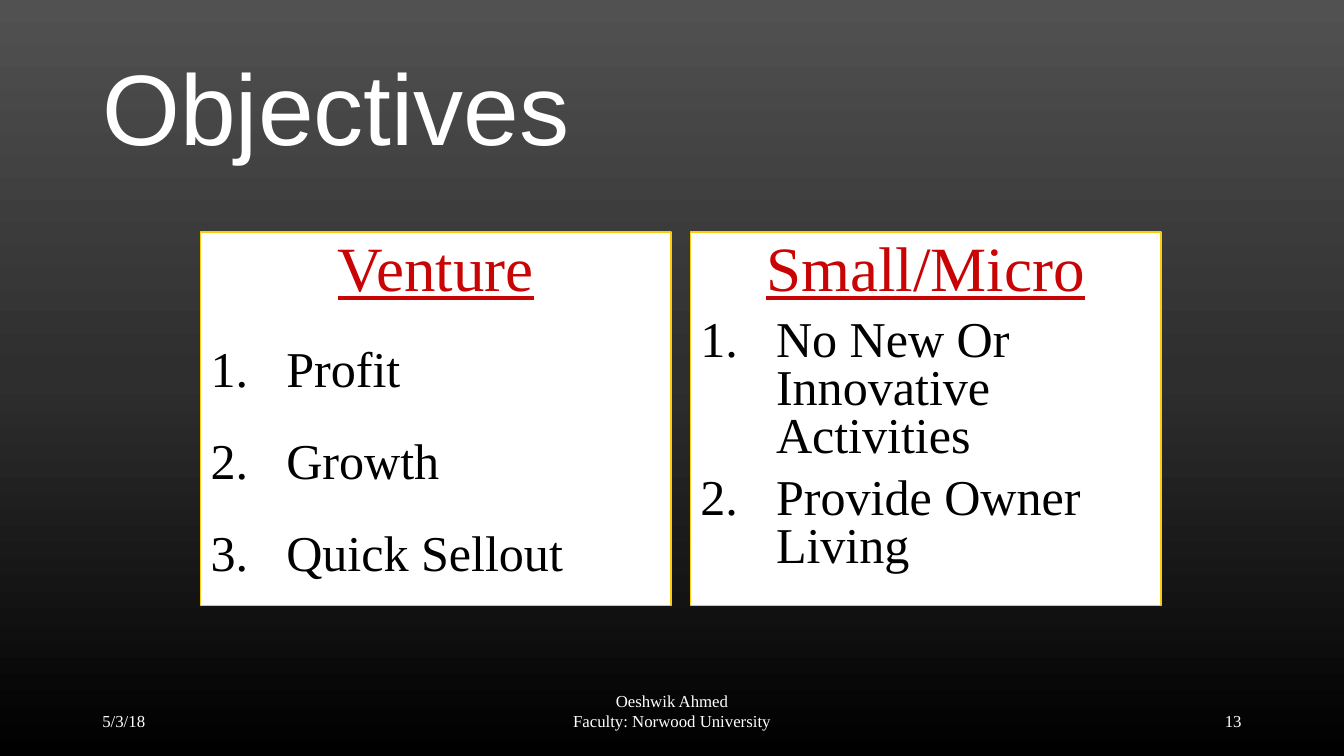
from copy import deepcopy

from lxml.etree import SubElement
from pptx import Presentation
from pptx.dml.color import RGBColor
from pptx.enum.shapes import MSO_SHAPE
from pptx.enum.text import MSO_ANCHOR, PP_ALIGN
from pptx.oxml.ns import qn
from pptx.util import Inches, Pt

COLUMNS, ROWS = 160, 90
WHITE, BLACK, RED, GOLD = "FFFFFF", "000000", "C80404", "FFCA08"
SERIF, SANS = "Times New Roman", "Arial"


def color(hex_string):
    return RGBColor.from_string(hex_string)


class SlideBuilder:
    """Holds the style and the slide; places are columns and rows of a 160 by 90 grid."""

    def __init__(self, presentation):
        self.column = presentation.slide_width / COLUMNS
        self.row = presentation.slide_height / ROWS
        self.slide = presentation.slides.add_slide(presentation.slide_layouts[6])

    def place(self, left, top, width, height):
        return [round(value) for value in (left * self.column, top * self.row,
                                           width * self.column, height * self.row)]

    def background(self, top, middle, bottom):
        fill = self.slide.background.fill
        fill.gradient()
        fill.gradient_angle = 270
        stop_list = self.slide.element.find(".//" + qn("a:gsLst"))
        stop_list.insert(1, deepcopy(stop_list[0]))
        for stop, position, shade in zip(fill.gradient_stops, (0, 0.5, 1), (top, middle, bottom)):
            stop.position = position
            stop.color.rgb = color(shade)

    def format(self, paragraph, size, font_color, name=SERIF, align=PP_ALIGN.LEFT,
               underline=False, spacing=1.0, before=0):
        paragraph.alignment = align
        paragraph.line_spacing = spacing
        paragraph.space_before = Pt(before)
        for run in paragraph.runs:
            run.font.size = Pt(size)
            run.font.name = name
            run.font.underline = underline
            run.font.color.rgb = color(font_color)

    def number(self, paragraph):
        """Gives the paragraph an automatic number with a hanging indent."""
        properties = paragraph._p.get_or_add_pPr()
        properties.set("marL", str(Inches(0.75)))
        properties.set("indent", str(-Inches(0.75)))
        SubElement(properties, qn("a:buFont"), typeface=SERIF)
        SubElement(properties, qn("a:buAutoNum"), type="arabicPeriod")

    def text(self, place, wording, size, **style):
        frame = self.slide.shapes.add_textbox(*self.place(*place)).text_frame
        frame.word_wrap = True
        frame.vertical_anchor = MSO_ANCHOR.MIDDLE
        frame.text = wording
        for paragraph in frame.paragraphs:
            self.format(paragraph, size, WHITE, **style)

    def panel(self, place, heading, items, spacing):
        shape = self.slide.shapes.add_shape(MSO_SHAPE.RECTANGLE, *self.place(*place))
        shape.shadow.inherit = False
        shape.fill.solid()
        shape.fill.fore_color.rgb = color(WHITE)
        shape.line.color.rgb = color(GOLD)
        shape.line.width = Pt(1)
        frame = shape.text_frame
        frame.word_wrap = True
        frame.vertical_anchor = MSO_ANCHOR.TOP
        frame.text = "\n".join([heading, *items])
        title, *entries = frame.paragraphs
        self.format(title, 45, RED, align=PP_ALIGN.CENTER, underline=True,
                    spacing=0.9, before=10)
        for entry in entries:
            self.format(entry, 35.8, BLACK, spacing=spacing, before=10)
            self.number(entry)


def main():
    presentation = Presentation()
    presentation.slide_width, presentation.slide_height = Inches(13.33), Inches(7.5)
    builder = SlideBuilder(presentation)
    builder.background("515151", "2E2E2E", BLACK)
    builder.text((11, 4.8, 138, 17.4), "Objectives", 71.5, name=SANS, spacing=0.9)

    panels = [
        ("Venture", ["Profit", "Growth", "Quick Sellout"], 1.3),
        ("Small/Micro", ["No New Or Innovative Activities", "Provide Owner Living"], 0.8),
    ]
    for index, (heading, items, spacing) in enumerate(panels):
        builder.panel((23.9 + 58.3 * index, 27.6, 56, 44.5), heading, items, spacing)

    builder.text((11, 83.4, 36, 4.8), "5/3/18", 12)
    builder.text((53, 82.2, 54, 4.8), "Oeshwik Ahmed\vFaculty: Norwood University", 12,
                 align=PP_ALIGN.CENTER)
    builder.text((113, 83.4, 36, 4.8), "13", 12, align=PP_ALIGN.RIGHT)
    presentation.save("out.pptx")


if __name__ == "__main__":
    main()
